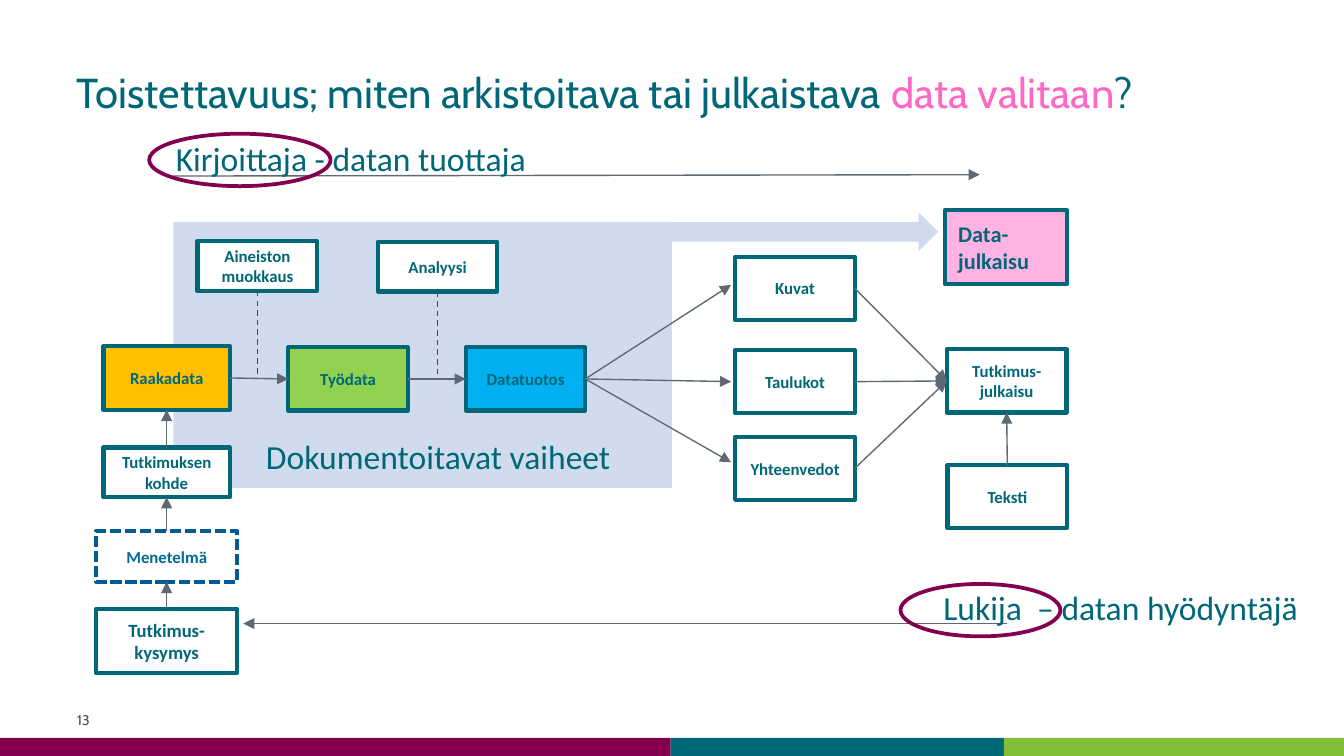
from pptx import Presentation
from pptx.dml.color import RGBColor
from pptx.enum.dml import MSO_LINE
from pptx.enum.shapes import MSO_CONNECTOR, MSO_SHAPE
from pptx.enum.text import MSO_ANCHOR, MSO_AUTO_SIZE, PP_ALIGN
from pptx.oxml.ns import qn
from pptx.util import Inches, Pt
from lxml import etree

TEAL = RGBColor(0x00, 0x67, 0x78)
PLUM = RGBColor(0x83, 0x00, 0x51)
GREEN = RGBColor(0x82, 0xBF, 0x37)
PALE_BLUE = RGBColor(0xD0, 0xDC, 0xED)
BLUE = RGBColor(0x02, 0x5B, 0x96)
METHOD_BLUE = RGBColor(0x00, 0x6B, 0x99)
PINK = RGBColor(0xFF, 0x67, 0xC5)
LIGHT_PINK = RGBColor(0xFF, 0xB3, 0xE2)
ORANGE = RGBColor(0xFF, 0xC0, 0x00)
LIME = RGBColor(0x92, 0xD0, 0x50)
SKY = RGBColor(0x00, 0xB0, 0xF0)
WHITE = RGBColor(0xFF, 0xFF, 0xFF)
GREY = RGBColor(0x5E, 0x69, 0x71)
DARK_GREY = RGBColor(0x46, 0x4F, 0x55)

RECTANGLE, ELLIPSE = MSO_SHAPE.RECTANGLE, MSO_SHAPE.OVAL
RIGHT_ARROW = MSO_SHAPE.RIGHT_ARROW
STRAIGHT = MSO_CONNECTOR.STRAIGHT
DASH, SHORT_DASH = MSO_LINE.DASH, MSO_LINE.SQUARE_DOT
MIDDLE, BOTTOM_ANCHOR = MSO_ANCHOR.MIDDLE, MSO_ANCHOR.BOTTOM
LEFT_ALIGN, CENTER = PP_ALIGN.LEFT, PP_ALIGN.CENTER
TOP, LEFT, BOTTOM, RIGHT = range(4)  # connection sites of a rectangle

presentation = Presentation()
presentation.slide_width = Inches(10)
presentation.slide_height = presentation.slide_width * 9 // 16
CELL = presentation.slide_width / 100  # grid of 100 columns, square cells
ROWS = presentation.slide_height / CELL
slide = presentation.slides.add_slide(presentation.slide_layouts[5])
shapes = slide.shapes


def add_box(kind, area, fill=None, line=None, weight=2.25, text="",
            size=9, colour=TEAL, bold=True, align=CENTER):
    shape = shapes.add_shape(kind, *(int(value * CELL) for value in area))
    shape.shadow.inherit = False
    if fill is None:
        shape.fill.background()
    else:
        shape.fill.solid()
        shape.fill.fore_color.rgb = fill
    if line is None:
        shape.line.fill.background()
    else:
        shape.line.color.rgb = line
        shape.line.width = Pt(weight)
    if text:
        shape.text_frame.text = text
        shape.text_frame.vertical_anchor = MIDDLE
        paragraph = shape.text_frame.paragraphs[0]
        paragraph.alignment = align
        font = paragraph.runs[0].font
        font.name, font.size, font.bold = "Calibri", Pt(size), bold
        font.color.rgb = colour
    return shape


def add_line(start, end, colour=GREY, dash=None, arrow=True):
    """Each end is (box name, site) or a (column, row) point."""
    connector = shapes.add_connector(STRAIGHT, 0, 0, 0, 0)
    if isinstance(start[0], str):
        connector.begin_connect(boxes[start[0]], start[1])
    else:
        connector.begin_x, connector.begin_y = (int(v * CELL) for v in start)
    if isinstance(end[0], str):
        connector.end_connect(boxes[end[0]], end[1])
    else:
        connector.end_x, connector.end_y = (int(v * CELL) for v in end)
    connector.line.color.rgb = colour
    connector.line.width = Pt(0.75)
    if dash is not None:
        connector.line.dash_style = dash
    properties = connector._element.spPr
    if arrow:
        outline = properties.find(qn("a:ln"))
        etree.SubElement(outline, qn("a:tailEnd")).set("type", "triangle")
    etree.SubElement(properties, qn("a:effectLst"))


# Footer bars
BAR_HEIGHT = 1.35
for left, right, colour in [(0, 49.9, PLUM), (49.9, 74.7, TEAL), (74.7, 100, GREEN)]:
    add_box(RECTANGLE, (left, ROWS - BAR_HEIGHT, right - left, BAR_HEIGHT), colour)

# Panel of documented stages and its arrow
panel = add_box(RECTANGLE, (12.9, 16.5, 37.1, 19.8), PALE_BLUE,
                text="Dokumentoitavat vaiheet", size=18, bold=False)
panel.text_frame.vertical_anchor = BOTTOM_ANCHOR
panel.text_frame.margin_left = Inches(0.33)
panel.text_frame.margin_bottom = Inches(0.09)
add_box(RIGHT_ARROW, (49.9, 15.8, 19.9, 2.9), PALE_BLUE)

# Title
title = shapes.title
title.left, title.top, title.width, title.height = (
    int(value * CELL) for value in (5, 2.1, 84.7, 9.4))
frame = title.text_frame
frame.auto_size = MSO_AUTO_SIZE.NONE
frame.vertical_anchor = MIDDLE
frame.margin_left = frame.margin_right = Inches(0.07)
frame.margin_top = frame.margin_bottom = Inches(0.04)
paragraph = frame.paragraphs[0]
paragraph.alignment = LEFT_ALIGN
for text, colour in [
    ("Toistettavuus; miten arkistoitava tai julkaistava ", TEAL),
    ("data valitaan", PINK),
    ("?", TEAL),
]:
    run = paragraph.add_run()
    run.text = text
    run.font.name, run.font.size = "Cabin", Pt(22.4)
    run.font.color.rgb = colour

# Process boxes: text, left, top, width, height, fill
WIDE, NARROW, TALL, LOW = 9.4, 8.9, 4.7, 3.7
boxes = {}
for text, left, top, width, height, fill in [
    ("Tutkimuksen kohde", 7.7, 33.3, WIDE, LOW, WHITE),
    ("Raakadata", 7.7, 25.75, WIDE, 4.75, ORANGE),
    ("Työdata", 21.45, 25.85, NARROW, TALL, LIME),
    ("Datatuotos", 34.65, 25.85, NARROW, TALL, SKY),
    ("Aineiston muokkaus", 14.7, 17.95, NARROW, LOW, WHITE),
    ("Analyysi", 28.1, 18, NARROW, LOW, WHITE),
    ("Kuvat", 54.7, 19.1, NARROW, TALL, WHITE),
    ("Taulukot", 54.7, 26.05, NARROW, TALL, WHITE),
    ("Yhteenvedot", 54.7, 32.5, NARROW, TALL, WHITE),
    ("Tutkimus-julkaisu", 70.45, 26, NARROW, TALL, WHITE),
    ("Teksti", 70.5, 34.6, NARROW, TALL, WHITE),
]:
    boxes[text] = add_box(RECTANGLE, (left, top, width, height), fill, TEAL, text=text)

boxes["Tutkimus-kysymys"] = add_box(
    RECTANGLE, (7.15, 45.3, 10.5, 4.8), WHITE, TEAL, 2, "Tutkimus-kysymys", 10)
boxes["Menetelmä"] = add_box(
    RECTANGLE, (7.15, 39.5, 10.5, 3.8), None, BLUE, 2, "Menetelmä", colour=METHOD_BLUE)
boxes["Menetelmä"].line.dash_style = SHORT_DASH
add_box(RECTANGLE, (70.3, 15.65, 9.1, 5.5), LIGHT_PINK, TEAL,
        text="Data-julkaisu", size=12, align=LEFT_ALIGN)

# Arrows between boxes
chain = ["Tutkimus-kysymys", "Menetelmä", "Tutkimuksen kohde", "Raakadata"]
for lower, upper in zip(chain, chain[1:]):
    add_line((lower, TOP), (upper, BOTTOM))
add_line(("Teksti", TOP), ("Tutkimus-julkaisu", BOTTOM))
add_line(("Raakadata", RIGHT), ("Työdata", LEFT))
add_line(("Työdata", RIGHT), ("Datatuotos", LEFT))
for result, row in [("Kuvat", 21.2), ("Taulukot", 28.4), ("Yhteenvedot", 34.4)]:
    add_line(("Datatuotos", RIGHT), (54.4, row))
    add_line((result, RIGHT), ("Tutkimus-julkaisu", LEFT))
for step, column in [("Aineiston muokkaus", 19.15), ("Analyysi", 32.55)]:
    add_line((step, BOTTOM), (column, 28.1), BLUE, DASH, arrow=False)

# Writer and reader directions
add_line((74.9, 46.4), (18.1, 46.4))
add_line((12.9, 13.1), (72.9, 13))

# Free text: text, area, font, size, colour
for text, area, name, size, colour in [
    ("Lukija  – datan hyödyntäjä", (69.2, 43.2, 31.1, 4), "Calibri", 18, TEAL),
    ("Kirjoittaja - datan tuottaja", (12.1, 9.8, 31.7, 4), "Calibri", 18, TEAL),
    ("13", (4.75, 52.3, 7.1, 2.6), "Cabin", 7.5, DARK_GREY),
]:
    label = shapes.add_textbox(*(int(value * CELL) for value in area))
    label.text_frame.text = text
    label.text_frame.word_wrap = True
    label.text_frame.vertical_anchor = MIDDLE
    font = label.text_frame.paragraphs[0].runs[0].font
    font.name, font.size = name, Pt(size)
    font.color.rgb = colour

# Rings around the two roles
for area in [(11.1, 9.95, 13.5, 3.9), (67, 43.45, 11.9, 3.9)]:
    add_box(ELLIPSE, area, line=PLUM, weight=2)

presentation.save("out.pptx")
